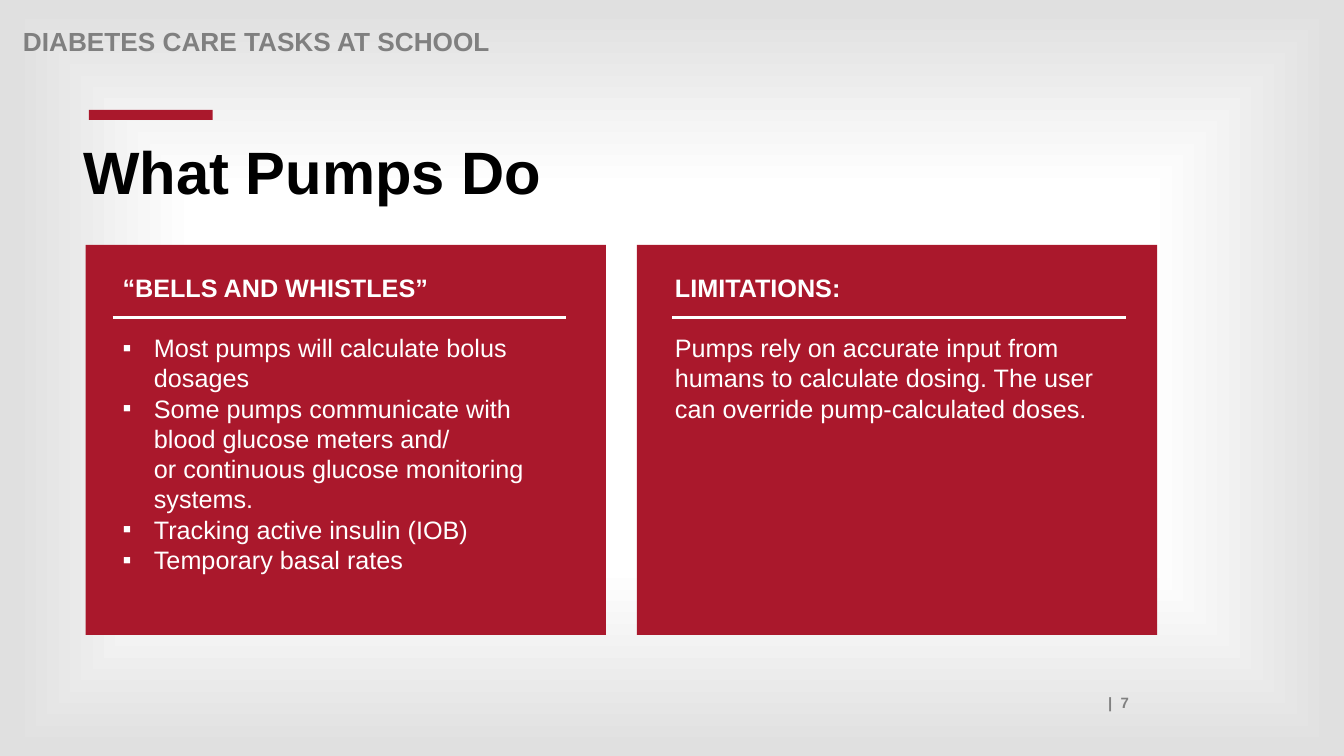
from dataclasses import dataclass

from lxml import etree
from pptx import Presentation
from pptx.dml.color import RGBColor
from pptx.enum.shapes import MSO_CONNECTOR, MSO_SHAPE
from pptx.enum.text import MSO_ANCHOR, PP_ALIGN
from pptx.oxml.ns import qn
from pptx.util import Cm, Pt

RECTANGLE = MSO_SHAPE.RECTANGLE
STRAIGHT = MSO_CONNECTOR.STRAIGHT
TOP = MSO_ANCHOR.TOP
LEFT, RIGHT = PP_ALIGN.LEFT, PP_ALIGN.RIGHT
TITLE_ONLY = 5


@dataclass(frozen=True)
class Theme:
    font: str = "Arial"
    red: RGBColor = RGBColor(0xAA, 0x18, 0x2C)
    grey: RGBColor = RGBColor(0x80, 0x80, 0x80)
    edge: RGBColor = RGBColor(0xE0, 0xE0, 0xE0)
    white: RGBColor = RGBColor(0xFF, 0xFF, 0xFF)
    black: RGBColor = RGBColor(0, 0, 0)
    title_size: Pt = Pt(42.7)
    header_size: Pt = Pt(18.7)
    body_size: Pt = Pt(18)
    number_size: Pt = Pt(10.7)
    body_line: Pt = Pt(21.6)


THEME = Theme()

PANEL_TOP, PANEL_WIDTH, PANEL_HEIGHT = Cm(6.17), Cm(13.11), Cm(9.83)
RULE_TOP, RULE_WIDTH = Cm(8), Cm(11.43)
TEXT_TOP, TEXT_WIDTH, TEXT_HEIGHT = Cm(6.73), Cm(11.63), Cm(8.71)

FEATURES = [
    "Most pumps will calculate bolus dosages",
    "Some pumps communicate with blood glucose meters and/\v"
    "or continuous glucose monitoring systems.",
    "Tracking active insulin (IOB)",
    "Temporary basal rates",
]
LIMITATIONS = [
    "Pumps rely on accurate input from humans to calculate dosing. "
    "The user can override pump-calculated doses.",
]


def paint_background(page):
    """Fade from a white centre to grey edges."""
    fill = page.background.fill
    fill.gradient()
    for stop, position, color in zip(
        fill.gradient_stops, (0.5, 0.98), (THEME.white, THEME.edge)
    ):
        stop.position = position
        stop.color.rgb = color
    gradient = page.element.find(".//" + qn("a:gradFill"))
    gradient.remove(gradient.find(qn("a:lin")))
    shade = etree.SubElement(gradient, qn("a:path"), path="shape")
    sides = dict.fromkeys("ltrb", "50000")
    etree.SubElement(shade, qn("a:fillToRect"), sides)


def style(para, size, color, bold=True, align=LEFT):
    para.font.name = THEME.font
    para.font.size = size
    para.font.bold = bold
    para.font.color.rgb = color
    para.alignment = align


def add_bullet(para):
    properties = para._p.get_or_add_pPr()
    indent = Cm(0.79)
    properties.set("marL", str(indent))
    properties.set("indent", str(-indent))
    etree.SubElement(properties, qn("a:buFont"), typeface=THEME.font)
    etree.SubElement(properties, qn("a:buChar"), char="▪")


def add_text(page, left, top, width, height):
    frame = page.shapes.add_textbox(left, top, width, height).text_frame
    frame.word_wrap = True
    frame.vertical_anchor = TOP
    return frame


def add_label(page, text, place, size, align=LEFT):
    para = add_text(page, *place).paragraphs[0]
    para.text = text
    style(para, size, THEME.grey, align=align)
    return para


def add_block(page, left, top, width, height):
    block = page.shapes.add_shape(RECTANGLE, left, top, width, height)
    block.shadow.inherit = False
    block.fill.solid()
    block.fill.fore_color.rgb = THEME.red
    block.line.fill.background()


def add_rule(page, left):
    rule = page.shapes.add_connector(
        STRAIGHT, left, RULE_TOP, left + RULE_WIDTH, RULE_TOP
    )
    rule.line.color.rgb = THEME.white
    rule.line.width = Pt(2)
    etree.SubElement(rule._element.spPr, qn("a:effectLst"))


def set_title(page, text):
    title = page.shapes.title
    title.left, title.top = Cm(1.85), Cm(3.48)
    title.width, title.height = Cm(28.02), Cm(2.41)
    frame = title.text_frame
    frame.vertical_anchor = TOP
    para = frame.paragraphs[0]
    para.text = text
    para.line_spacing = 0.9
    style(para, THEME.title_size, THEME.black)


def add_panel(page, left, text_left, rule_left, heading, lines, bulleted=False):
    add_block(page, left, PANEL_TOP, PANEL_WIDTH, PANEL_HEIGHT)
    frame = add_text(page, text_left, TEXT_TOP, TEXT_WIDTH, TEXT_HEIGHT)
    first = frame.paragraphs[0]
    first.text = heading
    style(first, THEME.body_size, THEME.white)
    first.line_spacing = first.space_after = THEME.body_line
    for line in lines:
        para = frame.add_paragraph()
        para.text = line
        style(para, THEME.body_size, THEME.white, bold=False)
        para.line_spacing = THEME.body_line
        if bulleted:
            add_bullet(para)
    add_rule(page, rule_left)


def main():
    deck = Presentation()
    deck.slide_width, deck.slide_height = Cm(33.87), Cm(19.05)
    page = deck.slides.add_slide(deck.slide_layouts[TITLE_ONLY])
    paint_background(page)

    header = add_label(
        page, "DIABETES CARE TASKS AT SCHOOL",
        (Cm(0.33), Cm(0.61), Cm(27.94), Cm(0.71)), THEME.header_size,
    )
    header.line_spacing = 0.9
    add_block(page, Cm(2.24), Cm(2.77), Cm(3.12), Cm(0.25))
    set_title(page, "What Pumps Do")

    add_panel(page, Cm(2.16), Cm(2.84), Cm(2.84),
              "“BELLS AND WHISTLES”", FEATURES, bulleted=True)
    add_panel(page, Cm(16.05), Cm(16.76), Cm(16.94),
              "LIMITATIONS:", LIMITATIONS)

    add_label(
        page, "|  7", (Cm(3.07), Cm(17.35), Cm(25.63), Cm(0.71)),
        THEME.number_size, RIGHT,
    )
    deck.save("out.pptx")


if __name__ == "__main__":
    main()
